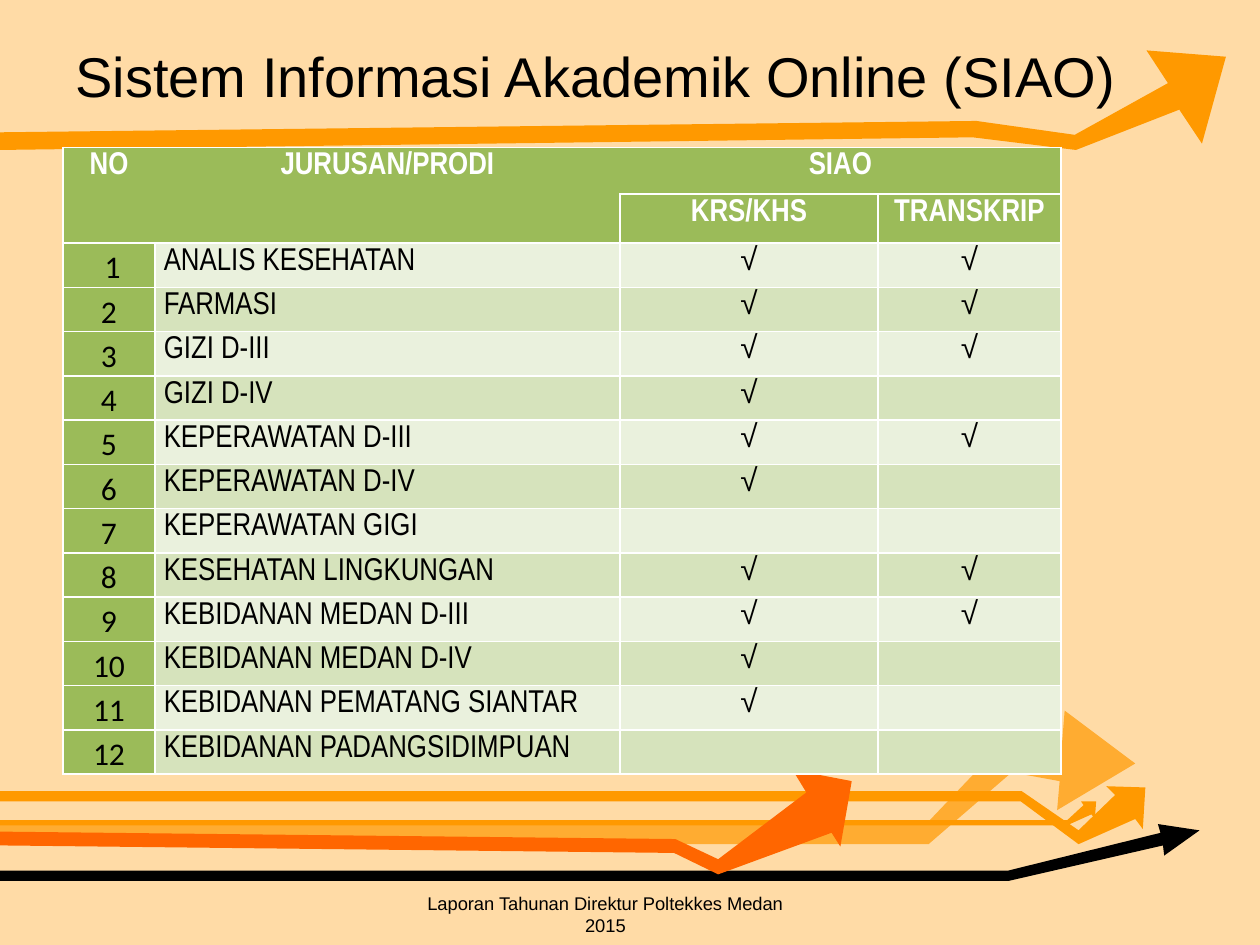
from lxml.etree import SubElement
from pptx import Presentation
from pptx.dml.color import RGBColor
from pptx.enum.text import MSO_ANCHOR, PP_ALIGN
from pptx.oxml.ns import qn
from pptx.util import Inches, Pt

BACKGROUND = RGBColor(0xFF, 0xDB, 0xA6)
AMBER = RGBColor(0xFF, 0xAC, 0x31)
ORANGE = RGBColor(0xFF, 0x99, 0x00)
RED_ORANGE = RGBColor(0xFF, 0x66, 0x00)
BLACK = RGBColor(0x00, 0x00, 0x00)
WHITE = RGBColor(0xFF, 0xFF, 0xFF)
GREEN = RGBColor(0x9B, 0xBB, 0x59)
BANDS = RGBColor(0xEA, 0xF1, 0xDD), RGBColor(0xD6, 0xE3, 0xBC)

UNIT = Inches(0.01)  # arrow outlines are given in hundredths of an inch
ARROWS = [
    (AMBER, [(0, 653), (736, 653), (796, 590), (843, 589), (845, 564), (901, 606),
             (839, 643), (841, 620), (803, 613), (737, 670), (0, 670)]),
    (ORANGE, [(0, 651), (847, 651), (860, 639), (858, 636), (870, 636), (869, 650),
              (866, 646), (867, 646), (847, 655), (0, 655)]),
    (ORANGE, [(0, 628), (811, 628), (856, 659), (885, 631), (878, 624), (909, 625),
              (907, 658), (901, 650), (856, 670), (810, 636), (0, 636)]),
    (BLACK, [(0, 691), (800, 691), (921, 661), (919, 654), (952, 659), (924, 679),
             (923, 671), (801, 699), (0, 699)]),
    (RED_ORANGE, [(-5, 671), (535, 677), (570, 694), (660, 661), (667, 672), (676, 620),
                  (629, 611), (640, 629), (570, 682), (536, 666), (-8, 660)]),
    (ORANGE, [(0, 119), (772, 109), (854, 119), (936, 87), (954, 114), (973, 45),
              (910, 40), (927, 66), (853, 107), (775, 96), (0, 105)]),
]

COLUMNS = 0.73, 3.69, 2.05, 1.45
HEADER_ROWS = [0.37, 0.39]
BODY_ROW = 0.35
HEADERS = {(0, 0): "NO", (0, 1): "JURUSAN/PRODI", (0, 2): "SIAO",
           (1, 2): "KRS/KHS", (1, 3): "TRANSKRIP"}
MERGES = [((0, 0), (1, 0)), ((0, 1), (1, 1)), ((0, 2), (0, 3))]
PROGRAMS = [  # name, number of ticks from the left
    ("ANALIS KESEHATAN", 2), ("FARMASI", 2), ("GIZI D-III", 2), ("GIZI D-IV", 1),
    ("KEPERAWATAN D-III", 2), ("KEPERAWATAN D-IV", 1), ("KEPERAWATAN GIGI", 0),
    ("KESEHATAN LINGKUNGAN", 2), ("KEBIDANAN MEDAN D-III", 2),
    ("KEBIDANAN MEDAN D-IV", 1), ("KEBIDANAN PEMATANG SIANTAR", 1),
    ("KEBIDANAN PADANGSIDIMPUAN", 0),
]
CELL_FORMAT = {"margin_left": Inches(0.07), "margin_right": Inches(0.07),
               "margin_top": 0, "margin_bottom": 0}


def set_attrs(obj, values):
    for name, value in values.items():
        setattr(obj, name, value)


def write(tf, text, size, align, font="Arial", color=BLACK, bold=False):
    p = tf.paragraphs[0]
    p.alignment = align
    r = p.add_run()
    r.text = text
    set_attrs(r.font, {"name": font, "size": Pt(size), "bold": bold})
    r.font.color.rgb = color
    return p


def add_arrows(s):
    for color, points in ARROWS:
        builder = s.shapes.build_freeform(*points[0], scale=UNIT)
        builder.add_line_segments(points[1:], close=True)
        sp = builder.convert_to_shape()
        sp.shadow.inherit = False
        sp.fill.solid()
        sp.fill.fore_color.rgb = color
        sp.line.fill.background()


def add_title(s, box, text):
    sp = s.shapes.title
    set_attrs(sp, dict(zip(("left", "top", "width", "height"), box)))
    set_attrs(sp.text_frame, {"vertical_anchor": MSO_ANCHOR.MIDDLE, "word_wrap": True})
    write(sp.text_frame, text, 32, PP_ALIGN.LEFT)
    s.shapes._spTree.append(sp._element)  # in front of the arrows


def set_borders(cell, hidden):
    """White 1 pt lines on every side except the hidden ones."""
    tcPr = cell._tc.get_or_add_tcPr()
    for i, side in enumerate("LRTB"):
        ln = SubElement(tcPr, qn(f"a:ln{side}"), w=str(Pt(1)))
        if side in hidden:
            SubElement(ln, qn("a:noFill"))
        else:
            fill = SubElement(ln, qn("a:solidFill"))
            SubElement(fill, qn("a:srgbClr"), val=str(WHITE))
        tcPr.remove(ln)
        tcPr.insert(i, ln)


def format_cell(cell, fill, hidden=""):
    set_attrs(cell, CELL_FORMAT)
    cell.fill.solid()
    cell.fill.fore_color.rgb = fill
    set_borders(cell, hidden)


def write_cell(cell, text, **style):
    p = write(cell.text_frame, text, 18, style.pop("align", PP_ALIGN.CENTER), **style)
    p.line_spacing = 1.15
    return p


def fill_header(table):
    for row in range(2):
        for col in range(4):
            hidden = {0: "R", 1: "LR", 2: "L"}.get(col, "") if row == 0 or col < 2 else ""
            format_cell(table.cell(row, col), GREEN, hidden)
    for start, end in MERGES:
        table.cell(*start).merge(table.cell(*end))
    for place, text in HEADERS.items():
        write_cell(table.cell(*place), text, font="Arial Narrow", color=WHITE, bold=True)


def fill_body(table):
    for i, (name, ticks) in enumerate(PROGRAMS):
        cells = [table.cell(i + len(HEADER_ROWS), col) for col in range(4)]
        for cell, fill in zip(cells, [GREEN] + [BANDS[i % 2]] * 3):
            format_cell(cell, fill)
        number = " 1" if i == 0 else str(i + 1)
        p = write_cell(cells[0], number, font="Calibri")
        set_attrs_xml = p._p.get_or_add_pPr().set
        set_attrs_xml("marL", str(Inches(0.38)))
        set_attrs_xml("indent", str(-Inches(0.38)))
        write_cell(cells[1], name, font="Arial Narrow", align=PP_ALIGN.LEFT)
        for cell in cells[2:2 + ticks]:
            write_cell(cell, "√", font="Arial Narrow")


def add_program_table(s, left, top):
    rows = HEADER_ROWS + [BODY_ROW] * len(PROGRAMS)
    table = s.shapes.add_table(len(rows), len(COLUMNS), left, top,
                               Inches(sum(COLUMNS)), Inches(sum(rows))).table
    for column, width in zip(table.columns, COLUMNS):
        column.width = Inches(width)
    for row, height in zip(table.rows, rows):
        row.height = Inches(height)
    fill_header(table)
    fill_body(table)


def add_footer(s, box, text):
    tf = s.shapes.add_textbox(*box).text_frame
    tf.word_wrap = True
    write(tf, text, 10.5, PP_ALIGN.CENTER)


def main():
    prs = Presentation()
    set_attrs(prs, {"slide_width": Inches(10), "slide_height": Inches(7.5)})
    s = prs.slides.add_slide(prs.slide_layouts[5])
    s.background.fill.solid()
    s.background.fill.fore_color.rgb = BACKGROUND
    add_arrows(s)
    add_title(s, [Inches(v) for v in (0.5, 0.28, 9.07, 0.63)],
              "Sistem Informasi Akademik Online (SIAO)")
    add_program_table(s, Inches(0.5), Inches(1.17))
    add_footer(s, [Inches(v) for v in (3.22, 7.03, 3.17, 0.31)],
               "Laporan Tahunan Direktur Poltekkes Medan 2015")
    prs.save("out.pptx")


if __name__ == "__main__":
    main()
